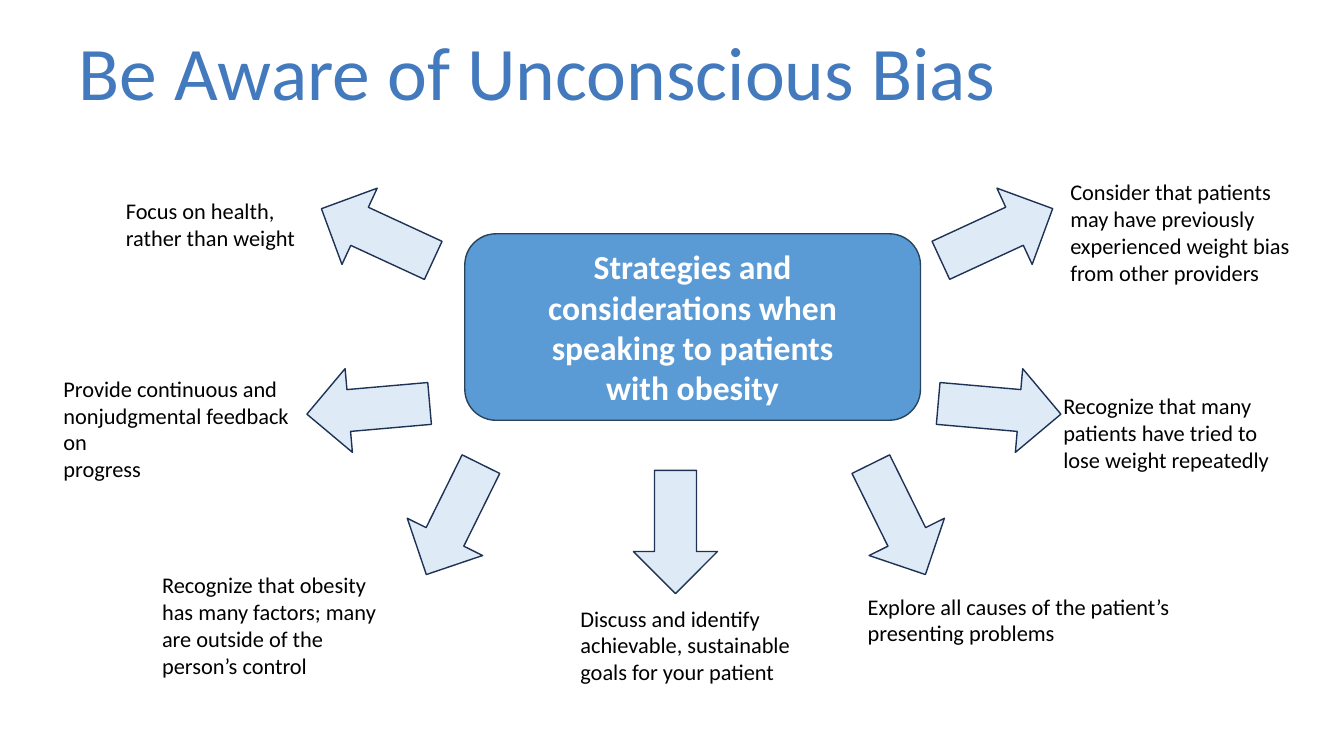
from pptx import Presentation
from pptx.dml.color import RGBColor
from pptx.enum.shapes import MSO_SHAPE as SHAPE
from pptx.enum.text import MSO_ANCHOR as ANCHOR, PP_ALIGN as ALIGN
from pptx.util import Pt

FONT = "Calibri"
TITLE_BLUE = RGBColor(0x43, 0x79, 0xBD)
HUB_FILL = RGBColor(0x5B, 0x9B, 0xD5)
HUB_LINE = RGBColor(0x28, 0x44, 0x5D)
ARROW_FILL = RGBColor(0xDE, 0xEB, 0xF7)
ARROW_LINE = RGBColor(0x1E, 0x32, 0x56)
WHITE = RGBColor(0xFF, 0xFF, 0xFF)
BLACK = RGBColor(0, 0, 0)

ARROW_W, ARROW_H = 88, 60

# Centre x, centre y and clockwise angle of each arrow
ARROWS = [
    (712, 167.5, -24.8),
    (714, 292, 5),
    (641.5, 371, 63.7),
    (482.5, 380, 90),
    (324, 371, 116.3),
    (263, 292, 175),
    (269.5, 167.5, 204.8),
]

# Left, top, width, height and wording of each strategy
STRATEGIES = [
    (82.8, 137.5, 160, 46, "Focus on health, rather than weight"),
    (38.2, 264.2, 181.5, 104.4,
     "Provide continuous and nonjudgmental feedback on\vprogress"),
    (108.7, 404.6, 504, 85,
     "Recognize that obesity\nhas many factors; many\n"
     "are outside of the\nperson’s control"),
    (407.5, 428.4, 504, 85,
     "Discuss and identify\vachievable, sustainable\vgoals for your patient"),
    (612.7, 419.8, 237.6, 65.5,
     "Explore all causes of the patient’s presenting problems"),
    (752.4, 276.5, 181.5, 65.5,
     "Recognize that many patients have tried to lose weight repeatedly"),
    (757.4, 123.8, 176.4, 104.4,
     "Consider that patients may have previously experienced weight bias "
     "from other providers"),
]


def write(sp, text, size=16, color=BLACK, bold=False, align=ALIGN.LEFT,
          anchor=ANCHOR.TOP, spacing=None):
    """Fill a shape with text: \\n starts a paragraph, \\v breaks a line."""
    tf = sp.text_frame
    tf.word_wrap = True
    tf.vertical_anchor = anchor
    tf.text = text
    for p in tf.paragraphs:
        p.alignment = align
        if spacing:
            p.line_spacing = spacing
        for r in p.runs:
            r.font.name = FONT
            r.font.size = Pt(size)
            r.font.bold = bold
            r.font.color.rgb = color


def add_text(s, x, y, w, h, text, **fmt):
    write(s.shapes.add_textbox(Pt(x), Pt(y), Pt(w), Pt(h)), text, **fmt)


def add_block(s, kind, x, y, w, h, fill, line):
    sp = s.shapes.add_shape(kind, Pt(x), Pt(y), Pt(w), Pt(h))
    sp.shadow.inherit = False
    sp.fill.solid()
    sp.fill.fore_color.rgb = fill
    sp.line.color.rgb = line
    sp.line.width = Pt(1)
    return sp


def add_arrow(s, cx, cy, angle):
    sp = add_block(s, SHAPE.RIGHT_ARROW, cx - ARROW_W / 2, cy - ARROW_H / 2,
                   ARROW_W, ARROW_H, ARROW_FILL, ARROW_LINE)
    sp.rotation = angle


def main():
    prs = Presentation()
    prs.slide_width, prs.slide_height = Pt(960), Pt(540)
    s = prs.slides.add_slide(prs.slide_layouts[6])

    # Title
    add_text(s, 49, 2, 828, 104.4, "Be Aware of Unconscious Bias", size=54,
             color=TITLE_BLUE, anchor=ANCHOR.MIDDLE, spacing=0.9)

    # Central topic
    hub = add_block(s, SHAPE.ROUNDED_RECTANGLE, 332, 167, 325.5, 133.2,
                    HUB_FILL, HUB_LINE)
    write(hub, "Strategies and\vconsiderations when\vspeaking to patients\v"
          "with obesity", size=24, color=WHITE, bold=True,
          align=ALIGN.CENTER, anchor=ANCHOR.MIDDLE)

    # Arrows out to the strategies
    for arrow in ARROWS:
        add_arrow(s, *arrow)
    for strategy in STRATEGIES:
        add_text(s, *strategy)

    prs.save("out.pptx")


if __name__ == "__main__":
    main()
